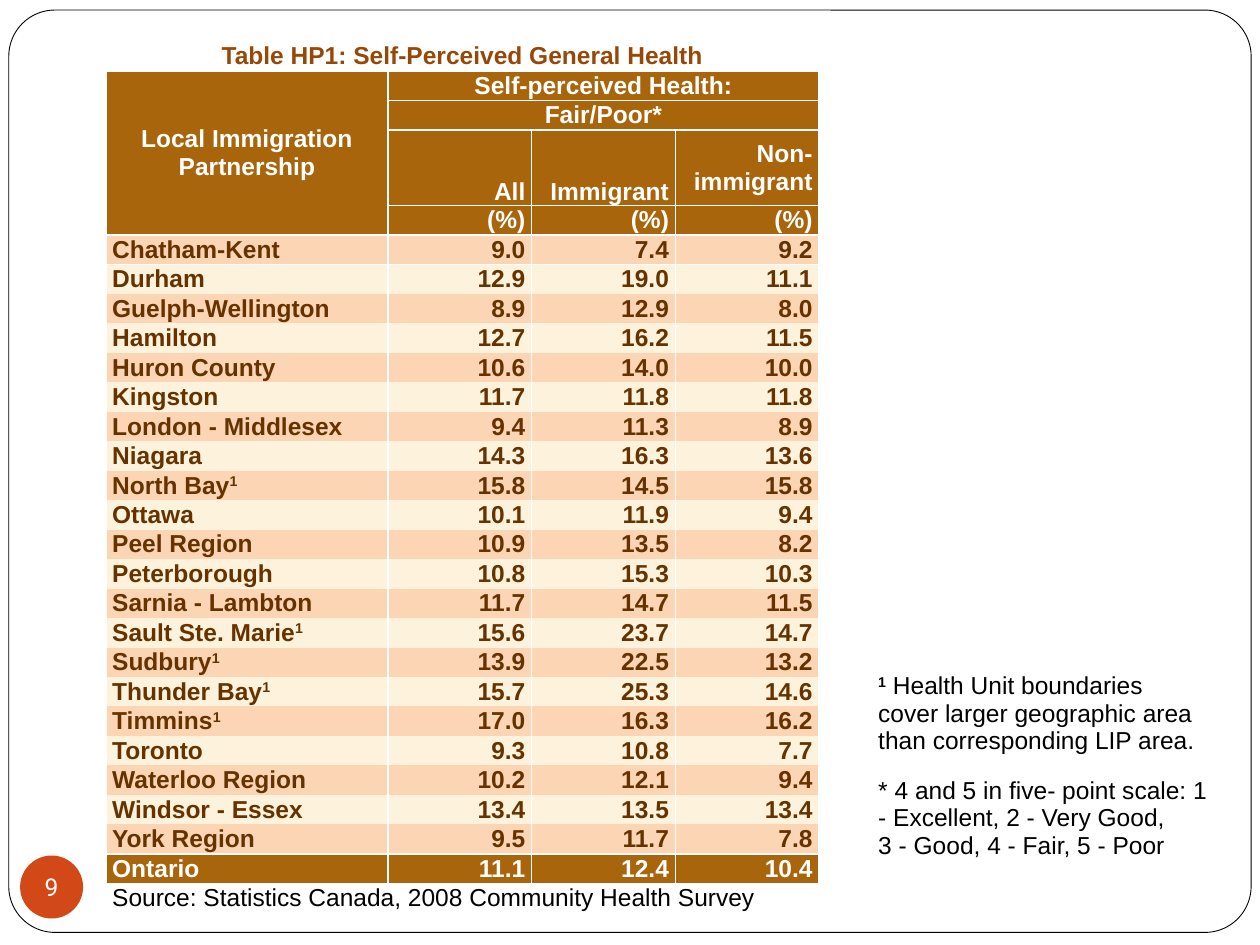
from pptx import Presentation
from pptx.dml.color import RGBColor
from pptx.enum.shapes import MSO_SHAPE as Shape
from pptx.enum.text import MSO_ANCHOR as Anchor, PP_ALIGN as Align
from pptx.oxml.ns import qn
from pptx.util import Inches, Pt
from lxml.etree import SubElement

NO_STYLE = "{2D5ABB26-0587-4C30-8999-92F81FD0307C}"
BROWN, PEACH, CREAM, WHITE, BLACK = "A9650B", "FCD5B4", "FDF2DB", "FFFFFF", "000000"


def rgb(code):
    return RGBColor.from_string(code)


def write(frame, text, color, align=Align.LEFT, bold=False, font="Arial"):
    """Fill a frame; a part between ^ marks is a bold superscript."""
    frame.text = ""
    for number, line in enumerate(text.split("\n")):
        para = frame.add_paragraph() if number else frame.paragraphs[0]
        para.alignment = align
        for index, part in enumerate(line.split("^")):
            if not part:
                continue
            span = para.add_run()
            span.text = part
            span.font.name, span.font.size = font, Pt(14)
            span.font.color.rgb = rgb(color)
            span.font.bold = bold or index % 2 == 1
            if index % 2:
                span.font._element.set("baseline", "30000")


deck = Presentation()
deck.slide_width, deck.slide_height = Inches(10), Inches(7.5)
page = deck.slides.add_slide(deck.slide_layouts[6])

# Page frame
frame = page.shapes.add_shape(Shape.ROUNDED_RECTANGLE, Inches(0.07), Inches(0.08),
                              Inches(9.86), Inches(7.32))
frame.adjustments[0] = 0.05
frame.shadow.inherit = False
frame.fill.solid()
frame.fill.fore_color.rgb = rgb(WHITE)
frame.line.color.rgb = rgb(BLACK)
frame.line.width = Pt(0.5)

# Health table content
regions = [
    ("Chatham-Kent", 9.0, 7.4, 9.2),
    ("Durham", 12.9, 19.0, 11.1),
    ("Guelph-Wellington", 8.9, 12.9, 8.0),
    ("Hamilton", 12.7, 16.2, 11.5),
    ("Huron County", 10.6, 14.0, 10.0),
    ("Kingston", 11.7, 11.8, 11.8),
    ("London - Middlesex", 9.4, 11.3, 8.9),
    ("Niagara", 14.3, 16.3, 13.6),
    ("North Bay^1^", 15.8, 14.5, 15.8),
    ("Ottawa", 10.1, 11.9, 9.4),
    ("Peel Region", 10.9, 13.5, 8.2),
    ("Peterborough", 10.8, 15.3, 10.3),
    ("Sarnia - Lambton", 11.7, 14.7, 11.5),
    ("Sault Ste. Marie^1^", 15.6, 23.7, 14.7),
    ("Sudbury^1^", 13.9, 22.5, 13.2),
    ("Thunder Bay^1^", 15.7, 25.3, 14.6),
    ("Timmins^1^", 17.0, 16.3, 16.2),
    ("Toronto", 9.3, 10.8, 7.7),
    ("Waterloo Region", 10.2, 12.1, 9.4),
    ("Windsor - Essex", 13.4, 13.5, 13.4),
    ("York Region", 9.5, 11.7, 7.8),
    ("Ontario", 11.1, 12.4, 10.4),
]
rows = [
    ("Table HP1: Self-Perceived General Health", "", "", ""),
    ("Local Immigration Partnership", "Self-perceived Health:", "", ""),
    ("", "Fair/Poor*", "", ""),
    ("", "All", "Immigrant", "Non-immigrant"),
    ("", "(%)", "(%)", "(%)"),
    *[(name, *[f"{value:.1f}" for value in values]) for name, *values in regions],
    ("Source: Statistics Canada, 2008 Community Health Survey", "", "", ""),
]
HEADER_END, SOURCE = 4, len(rows) - 1
TOTAL = SOURCE - 1
RULES_BELOW = {0, 2, HEADER_END, TOTAL - 1}

# Health table grid
health = page.shapes.add_table(len(rows), 4, Inches(0.84), Inches(0.33),
                               Inches(5.66), Inches(6.92)).table
for column, width in zip(health.columns, (2.24, 1.14, 1.14, 1.14)):
    column.width = Inches(width)
for row in health.rows:
    row.height = Inches(6.32 / (len(rows) - 1))
health.rows[3].height = Inches(0.6)
for top, left, bottom, right in ((0, 0, 0, 3), (1, 0, HEADER_END, 0), (1, 1, 1, 3),
                                 (2, 1, 2, 3), (SOURCE, 0, SOURCE, 3)):
    health.cell(top, left).merge(health.cell(bottom, right))

# Health table cells
for r, texts in enumerate(rows):
    for c, text in enumerate(texts):
        cell = health.cell(r, c)
        in_header = 1 <= r <= HEADER_END
        sides = ["L", "R"] if 0 < r < SOURCE else []
        if r - 1 in RULES_BELOW and not (c == 0 and r == 3):
            sides.append("T")
        if r in RULES_BELOW and not (c == 0 and r == 2) or (r, c) == (1, 0):
            sides.append("B")
        properties = cell._tc.get_or_add_tcPr()
        for side in sides:
            edge = SubElement(properties, qn(f"a:ln{side}"), w=str(Pt(1)))
            SubElement(SubElement(edge, qn("a:solidFill")), qn("a:srgbClr"), val=WHITE)

        if r in (0, SOURCE):
            cell.fill.background()
            color = "974807" if r == 0 else BLACK
        else:
            dark = in_header or r == TOTAL
            band = PEACH if (r - HEADER_END) % 2 else CREAM
            cell.fill.solid()
            cell.fill.fore_color.rgb = rgb(BROWN if dark else band)
            color = WHITE if dark else "663300"

        if r == 0 or r in (1, 2) or in_header and c == 0:
            align = Align.CENTER
        else:
            align = Align.RIGHT if c else Align.LEFT
        cell.vertical_anchor = Anchor.BOTTOM if r == 3 and c in (1, 2) else Anchor.MIDDLE
        write(cell.text_frame, text, color, align, bold=r != SOURCE)

# Footnotes
notes = page.shapes.add_table(2, 1, Inches(6.92), Inches(5.25), Inches(2.72), Inches(1.66)).table
footnotes = (
    "^1^ Health Unit boundaries cover larger geographic area than corresponding LIP area.",
    "* 4 and 5 in five- point scale: 1 - Excellent, 2 - Very Good,\n3 - Good, 4 - Fair, 5 - Poor",
)
for r, text in enumerate(footnotes):
    cell = notes.cell(r, 0)
    cell.fill.background()
    cell.vertical_anchor = Anchor.MIDDLE
    write(cell.text_frame, text, BLACK)

# Plain style and tight margins for both tables
for table in (health, notes):
    table.first_row = table.horz_banding = False
    table._tbl.tblPr.find(qn("a:tableStyleId")).text = NO_STYLE
    for cell in table.iter_cells():
        cell.margin_left = cell.margin_right = Inches(0.05)
        cell.margin_top = cell.margin_bottom = 0

# Page number
badge = page.shapes.add_shape(Shape.OVAL, Inches(0.16), Inches(6.79), Inches(0.5), Inches(0.5))
badge.shadow.inherit = False
badge.fill.solid()
badge.fill.fore_color.rgb = rgb("D34817")
badge.line.fill.background()
label = badge.text_frame
label.margin_left = label.margin_right = label.margin_top = label.margin_bottom = 0
label.vertical_anchor = Anchor.MIDDLE
label.word_wrap = False
write(label, "9", WHITE, Align.CENTER, font="Roboto")

deck.save("out.pptx")
